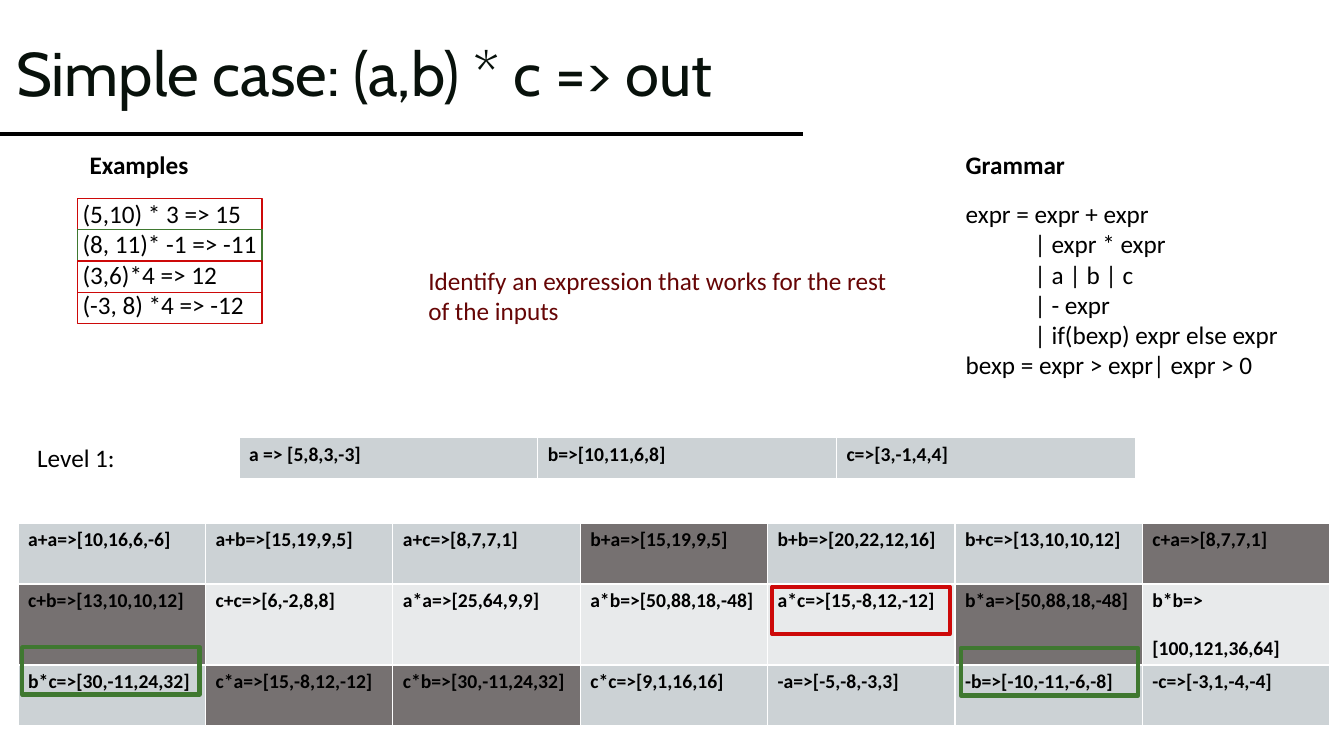
from dataclasses import dataclass

from lxml import etree
from pptx import Presentation
from pptx.dml.color import RGBColor
from pptx.enum.shapes import MSO_CONNECTOR, MSO_SHAPE
from pptx.enum.text import MSO_ANCHOR, MSO_AUTO_SIZE, PP_ALIGN
from pptx.oxml.ns import qn
from pptx.util import Inches, Pt

LINE = MSO_CONNECTOR.STRAIGHT
RECT = MSO_SHAPE.RECTANGLE
MIDDLE = MSO_ANCHOR.MIDDLE
NO_FIT = MSO_AUTO_SIZE.NONE
LEFT = PP_ALIGN.LEFT


@dataclass(frozen=True)
class Theme:
    head: str = "Cabin"
    body: str = "Calibri"
    big: float = 44
    mid: float = 18
    small: float = 14
    ink: str = "000000"
    title: str = "08110B"
    note: str = "660505"
    red: str = "CD0909"
    green: str = "3F7830"
    odd: str = "CCD2D5"
    even: str = "E8EAEB"
    dull: str = "767171"
    white: str = "FFFFFF"


THEME = Theme()

RULES = [
    "expr = expr + expr",
    "| expr * expr",
    "| a | b | c",
    "| - expr",
    "| if(bexp) expr else expr",
    "bexp = expr > expr| expr > 0",
]
CASES = [
    ("(5,10) * 3 => 15", THEME.red),
    ("(8, 11)* -1 => -11", THEME.green),
    ("(3,6)*4 => 12", THEME.red),
    ("(-3, 8) *4 => -12", THEME.red),
]
BASE = [["a => [5,8,3,-3]", "b=>[10,11,6,8]", "c=>[3,-1,4,4]"]]
TERMS = [
    ["a+a=>[10,16,6,-6]", "a+b=>[15,19,9,5]", "a+c=>[8,7,7,1]", "b+a=>[15,19,9,5]",
     "b+b=>[20,22,12,16]", "b+c=>[13,10,10,12]", "c+a=>[8,7,7,1]"],
    ["c+b=>[13,10,10,12]", "c+c=>[6,-2,8,8]", "a*a=>[25,64,9,9]", "a*b=>[50,88,18,-48]",
     "a*c=>[15,-8,12,-12]", "b*a=>[50,88,18,-48]", "b*b=>\n[100,121,36,64]"],
    ["b*c=>[30,-11,24,32]", "c*a=>[15,-8,12,-12]", "c*b=>[30,-11,24,32]", "c*c=>[9,1,16,16]",
     "-a=>[-5,-8,-3,3]", "-b=>[-10,-11,-6,-8]", "-c=>[-3,1,-4,-4]"],
]


def rgb(color):
    return RGBColor.from_string(color)


def write(frame, text, size=THEME.mid, font=THEME.body, color=THEME.ink,
          bold=False, lead=1.0, gap=0, inset=0):
    for i, line in enumerate(text.split("\n")):
        para = frame.add_paragraph() if i else frame.paragraphs[0]
        para.text = line
        para.alignment = LEFT
        para.line_spacing = lead
        if i and gap:
            para.space_before = Pt(gap)
        if inset and line.startswith("|"):
            para._p.get_or_add_pPr().set("marL", str(Inches(inset)))
        for run in para.runs:
            run.font.size = Pt(size)
            run.font.name = font
            run.font.bold = bold
            run.font.color.rgb = rgb(color)


def label(slide, box, text, **form):
    frame = slide.shapes.add_textbox(*map(Inches, box)).text_frame
    frame.word_wrap = False
    write(frame, text, **form)


def outline(slide, box, color, width):
    rect = slide.shapes.add_shape(RECT, *map(Inches, box))
    rect.shadow.inherit = False
    rect.fill.background()
    rect.line.color.rgb = rgb(color)
    rect.line.width = Pt(width)


def edge(cell):
    props = cell._tc.get_or_add_tcPr()
    for side in ("lnL", "lnR", "lnT", "lnB"):
        line = etree.SubElement(props, qn("a:" + side), w=str(Pt(1)))
        fill = etree.SubElement(line, qn("a:solidFill"))
        etree.SubElement(fill, qn("a:srgbClr"), val=THEME.white)


def grid(slide, box, rows):
    shape = slide.shapes.add_table(len(rows), len(rows[0]), *map(Inches, box))
    table = shape.table
    table.first_row = False
    table.horz_banding = False
    seen = set()
    for r, row in enumerate(rows):
        for c, text in enumerate(row):
            value = text.split("=>")[1].strip()
            tone = THEME.even if r % 2 else THEME.odd
            cell = table.cell(r, c)
            edge(cell)
            cell.fill.solid()
            cell.fill.fore_color.rgb = rgb(THEME.dull if value in seen else tone)
            write(cell.text_frame, text, size=THEME.small, bold=True, gap=17)
            seen.add(value)


def header(slide, box):
    x, y, w, h = box
    title = slide.shapes.title
    title.left, title.top = Inches(x + 0.06), Inches(y + 0.03)
    title.width, title.height = Inches(w - 0.45), Inches(h)
    frame = title.text_frame
    frame.auto_size = NO_FIT
    frame.word_wrap = True
    frame.vertical_anchor = MIDDLE
    write(frame, "Simple case: (a,b) * c => out", size=THEME.big,
          font=THEME.head, color=THEME.title, lead=0.9)
    ends = (x, y + 1.33, x + w, y + 1.33)
    rule = slide.shapes.add_connector(LINE, *map(Inches, ends))
    rule.line.color.rgb = rgb(THEME.ink)
    rule.line.width = Pt(2.25)
    etree.SubElement(rule._element.spPr, qn("a:effectLst"))


def cases(slide, box):
    x, y, w, h = box
    label(slide, (x + 0.07, y, 1.19, 0.4), "Examples", bold=True)
    label(slide, (x, y + 0.49, w, h - 0.49), "\n".join(text for text, _ in CASES))
    for i, (_, color) in enumerate(CASES):
        outline(slide, (x + 0.05, y + 0.54 + 0.31 * i, 1.83, 0.31), color, 0.85)


def grammar(slide, box):
    x, y, w, h = box
    label(slide, (x, y, 1.2, 0.4), "Grammar", bold=True)
    label(slide, (x, y + 0.49, w, h - 0.49), "\n".join(RULES), inset=0.68)


def level(slide, box):
    x, y, w, h = box
    label(slide, (x, y, 1.04, 0.4), "Level 1:")
    grid(slide, (x + 2.1, y, w - 2.1, h), BASE)


def terms(slide, box):
    x, y, w, h = box
    grid(slide, box, TERMS)
    marks = [(7.48, 0.63, THEME.red), (0.04, 1.23, THEME.green), (9.35, 1.24, THEME.green)]
    for dx, dy, color in marks:
        outline(slide, (x + dx, y + dy, 1.76, 0.47), color, 3)


def main():
    deck = Presentation()
    deck.slide_width, deck.slide_height = Inches(13.33), Inches(7.5)
    slide = deck.slides.add_slide(deck.slide_layouts[5])
    header(slide, (0, 0, 7.96, 1.45))
    cases(slide, (0.72, 1.43, 1.95, 1.8))
    grammar(slide, (9.48, 1.43, 3.34, 2.41))
    label(slide, (4.15, 2.58, 4.8, 0.71),
          "Identify an expression that works for the rest\vof the inputs", color=THEME.note)
    level(slide, (0.27, 4.34, 10.99, 0.41))
    terms(slide, (0.18, 5.19, 13.01, 1.81))
    deck.save("out.pptx")


if __name__ == "__main__":
    main()
